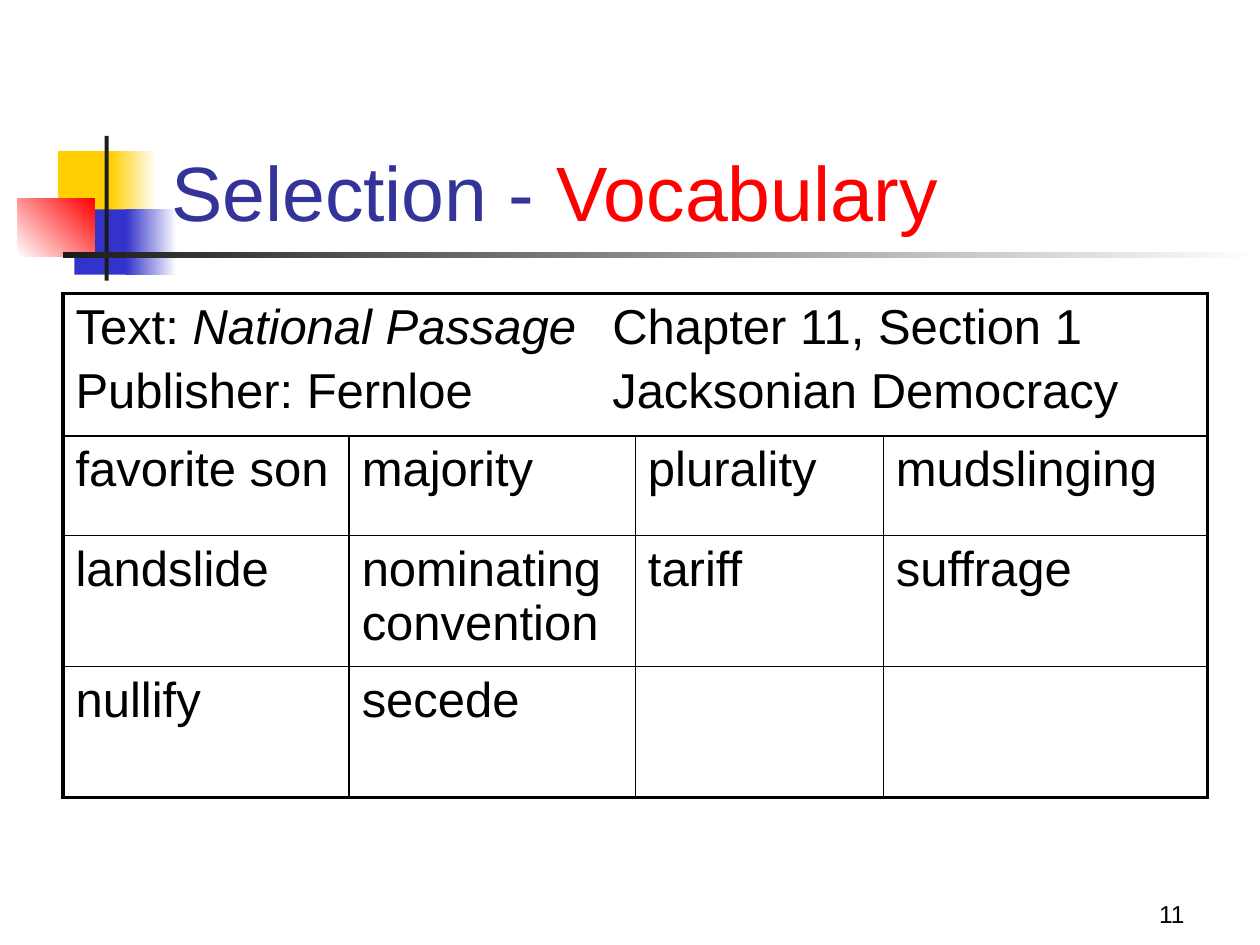
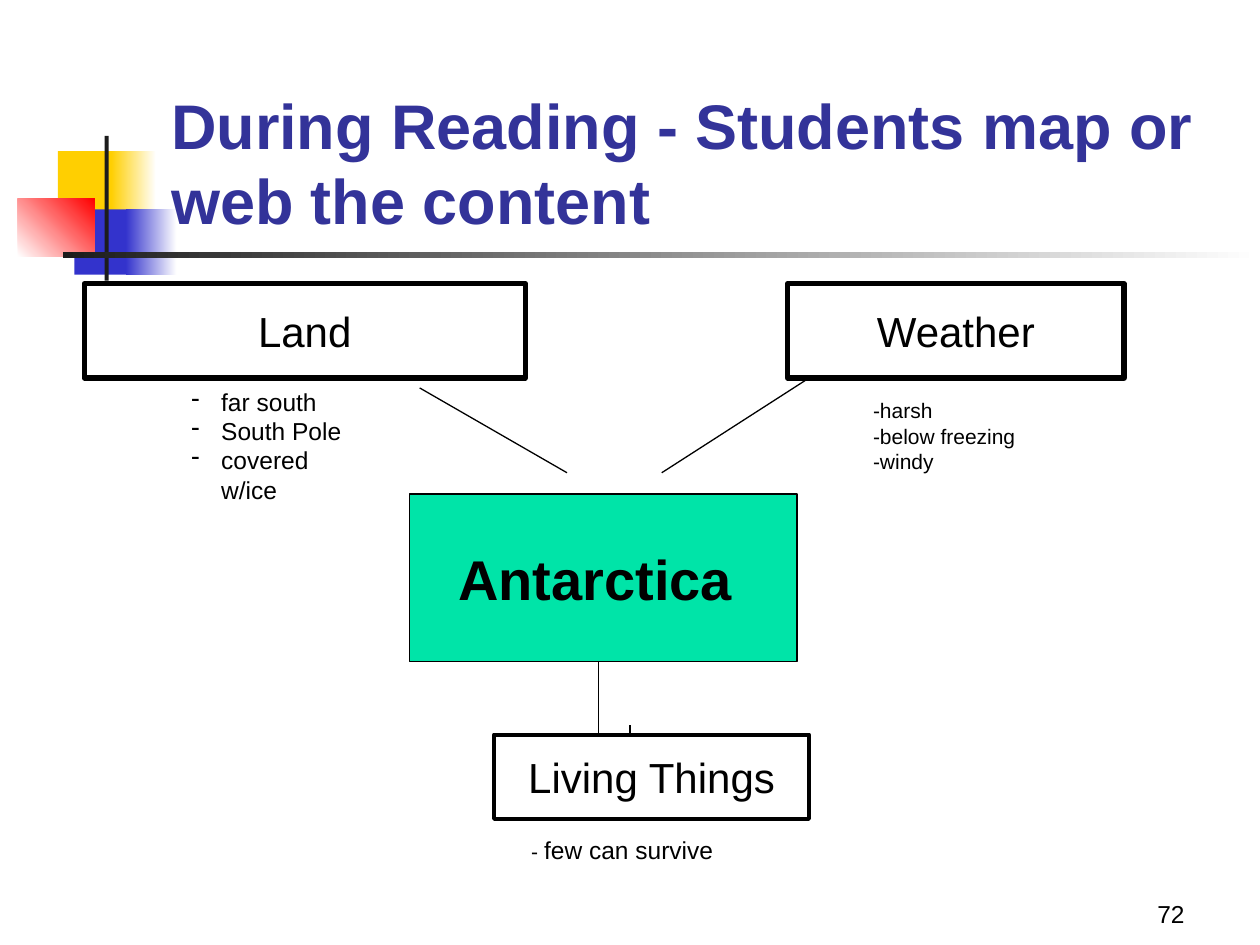
"""Build two reading-lesson slides: a vocabulary table and a concept web."""
from lxml import etree
from pptx import Presentation
from pptx import util as u
from pptx.dml.color import RGBColor
from pptx.enum import shapes, text
from pptx.oxml import ns

YELLOW = RGBColor(0xFF, 0xCF, 0x01)
BLUE = RGBColor(0x33, 0x33, 0xCC)
RED = RGBColor(0xFF, 0x00, 0x00)
CHARCOAL = RGBColor(0x1C, 0x1C, 0x1C)
INDIGO = RGBColor(0x33, 0x33, 0x99)
GREEN = RGBColor(0x00, 0xE4, 0xA8)
BLACK = RGBColor(0x00, 0x00, 0x00)
WHITE = RGBColor(0xFF, 0xFF, 0xFF)

FONT = "Arial"
BLANK_LAYOUT = 6
THIN, THICK = u.Pt(1), u.Pt(2.25)
LEFT, CENTER, RIGHT = text.PP_ALIGN.LEFT, text.PP_ALIGN.CENTER, text.PP_ALIGN.RIGHT

MOTIF = [
    ((1.17, 3.05, 1.22, 1.32), [YELLOW], 0),
    ((2.24, 3.05, 0.91, 1.32), [YELLOW, WHITE], 0),
    ((1.5, 4.22, 1.17, 1.32), [BLUE], 0),
    ((2.54, 4.22, 1.02, 1.32), [BLUE, WHITE], 0),
    ((0.36, 4.01, 1.55, 1.17), [WHITE, RED], 45),
    ((2.11, 2.74, 0.08, 2.92), [CHARCOAL], 0),
    ((1.27, 5.08, 24.13, 0.13), [CHARCOAL, WHITE], 0),
]

COLUMN_WIDTHS = [5.77, 5.77, 5, 6.53]
ROW_HEIGHTS = [2.87, 2.01, 2.64, 2.64]
VOCABULARY = [
    ["favorite son", "majority", "plurality", "mudslinging"],
    ["landslide", "nominating convention", "tariff", "suffrage"],
    ["nullify", "secede", "", ""],
]

SPOKES = [
    ((11.43, 9.53), (8.46, 7.82)),
    ((13.34, 9.53), (16.31, 7.62)),
    ((12.7, 14.81), (12.7, 14.61)),
    ((12.07, 13.34), (12.07, 14.81)),
]


def cm(lengths):
    """Turn plain numbers into centimetre lengths."""
    return [u.Cm(length) for length in lengths]


def set_values(target, values):
    """Set each named value as an attribute of the target."""
    for name, value in values.items():
        setattr(target, name, value)


def write(frame, lines, size, color=BLACK, align=LEFT, **paragraph_values):
    """Write lines of (text, font values) runs into a text frame."""
    for index, runs in enumerate(lines):
        paragraph = frame.paragraphs[0] if index == 0 else frame.add_paragraph()
        set_values(paragraph, {"alignment": align, **paragraph_values})
        for words, values in runs:
            run = paragraph.add_run()
            run.text = words
            font_values = {"name": FONT, "size": u.Pt(size), **values}
            run.font.color.rgb = font_values.pop("color", color)
            set_values(run.font, font_values)


def plain(*lines):
    """Make each line a single run without special font values."""
    return [[(line, {})] for line in lines]


def add_text(slide, box, lines, size, anchor=text.MSO_ANCHOR.BOTTOM, **style):
    """Add a wrapping text box and return its text frame."""
    frame = slide.shapes.add_textbox(*cm(box)).text_frame
    set_values(frame, {"word_wrap": True, "vertical_anchor": anchor})
    write(frame, lines, size, **style)
    return frame


def add_rectangle(slide, box, colors):
    """Add a rectangle without outline, solid or fading between two colours."""
    shape = slide.shapes.add_shape(shapes.MSO_SHAPE.RECTANGLE, *cm(box))
    shape.shadow.inherit = False
    shape.line.fill.background()
    if len(colors) == 1:
        shape.fill.solid()
        shape.fill.fore_color.rgb = colors[0]
    else:
        shape.fill.gradient()
        for stop, color in zip(shape.fill.gradient_stops, colors):
            stop.color.rgb = color
    return shape


def add_box(slide, box, lines, size, line_width, fill=WHITE, line=BLACK, align=CENTER):
    """Add an outlined rectangle with unwrapped text."""
    shape = add_rectangle(slide, box, [fill])
    shape.line.color.rgb = line
    shape.line.width = u.Pt(line_width)
    set_values(shape.text_frame, {"word_wrap": False,
                                  "vertical_anchor": text.MSO_ANCHOR.MIDDLE})
    write(shape.text_frame, lines, size, align=align)


def add_line(slide, start, end):
    """Add a thin straight black line."""
    connector = slide.shapes.add_connector(
        shapes.MSO_CONNECTOR.STRAIGHT, *cm(start), *cm(end))
    connector.line.color.rgb = BLACK
    connector.line.width = u.Pt(0.75)
    etree.SubElement(connector._element.spPr, ns.qn("a:effectLst"))


def add_dash_bullets(frame):
    """Give every paragraph a hanging dash bullet."""
    indent = u.Cm(0.6)
    for paragraph in frame.paragraphs:
        properties = paragraph._p.get_or_add_pPr()
        properties.set("marL", str(indent))
        properties.set("indent", str(-indent))
        etree.SubElement(properties, ns.qn("a:buChar"), char="-")


def add_tab_stop(paragraph, position):
    """Add a left tab stop at a position in centimetres."""
    stops = etree.SubElement(paragraph._p.get_or_add_pPr(), ns.qn("a:tabLst"))
    etree.SubElement(stops, ns.qn("a:tab"), pos=str(u.Cm(position)), algn="l")


def set_borders(cell, widths):
    """Draw black left, right, top and bottom borders of the given widths."""
    properties = cell._tc.get_or_add_tcPr()
    for index, (side, width) in enumerate(zip("LRTB", widths)):
        border = etree.Element(ns.qn(f"a:ln{side}"), w=str(width))
        fill = etree.SubElement(border, ns.qn("a:solidFill"))
        etree.SubElement(fill, ns.qn("a:srgbClr"), val=str(BLACK))
        properties.insert(index, border)


def add_vocabulary_table(slide, heading):
    """Add the word table with a merged heading row and a thick frame."""
    rows, columns = len(ROW_HEIGHTS), len(COLUMN_WIDTHS)
    box = (1.27, 5.92, sum(COLUMN_WIDTHS), sum(ROW_HEIGHTS))
    table = slide.shapes.add_table(rows, columns, *cm(box)).table
    set_values(table, {"first_row": False, "horz_banding": False})
    for column, width in zip(table.columns, cm(COLUMN_WIDTHS)):
        column.width = width
    for row, height in zip(table.rows, cm(ROW_HEIGHTS)):
        row.height = height
    table.cell(0, 0).merge(table.cell(0, columns - 1))

    contents = [[heading]] + [[plain(word) if word else [] for word in words]
                              for words in VOCABULARY]
    for row, row_contents in enumerate(contents):
        for column, lines in enumerate(row_contents):
            cell = table.cell(row, column)
            cell.fill.background()
            write(cell.text_frame, lines, 28, space_before=u.Pt(5.6))
            edges = (column == 0, column == len(row_contents) - 1,
                     row == 0, row == rows - 1)
            set_borders(cell, [THICK if edge else THIN for edge in edges])
    for paragraph in table.cell(0, 0).text_frame.paragraphs:
        add_tab_stop(paragraph, 10.82)


def add_slide(presentation, title, title_size, number):
    """Add a slide with the shared motif, title and page number."""
    slide = presentation.slides.add_slide(presentation.slide_layouts[BLANK_LAYOUT])
    for box, colors, angle in MOTIF:
        shape = add_rectangle(slide, box, colors)
        if len(colors) > 1:
            shape.fill.gradient_angle = angle
    add_text(slide, (18.85, 17.58, 5.28, 1.27), plain(number), 14, align=RIGHT)
    add_text(slide, (3.2, 1.73, 21.64, 3.18), [title], title_size, color=INDIGO)
    return slide


def build_vocabulary(presentation):
    """Build the vocabulary slide."""
    title = [("Selection - ", {}), ("Vocabulary", {"color": RED})]
    slide = add_slide(presentation, title, 44, "11")
    heading = [
        [("Text: ", {}), ("National Passage", {"italic": True}),
         ("\tChapter 11, Section 1", {})],
        [("Publisher: Fernloe\tJacksonian Democracy", {})],
    ]
    add_vocabulary_table(slide, heading)


def build_web(presentation):
    """Build the concept web slide."""
    bold = {"bold": True}
    title = [("During Reading - Students map or web the content", bold)]
    slide = add_slide(presentation, title, 36, "72")
    add_box(slide, (8.25, 9.96, 7.82, 3.38), [[("Antarctica ", bold)]], 32, 0.75, GREEN)
    add_box(slide, (15.88, 5.72, 6.78, 1.9), plain("Weather"), 24, 3)
    add_box(slide, (1.7, 5.72, 8.89, 1.9), plain("Land"), 24, 3)
    land_facts = add_text(slide, (3.61, 7.67, 3.68, 2.03),
                          plain("far south", "South Pole", "covered w/ice"), 14,
                          anchor=text.MSO_ANCHOR.TOP)
    add_dash_bullets(land_facts)
    add_box(slide, (17.35, 8.05, 5.08, 1.47),
            plain("-harsh", "-below freezing", "-windy"), 12, 0.75, line=WHITE, align=LEFT)
    add_box(slide, (9.96, 14.81, 6.35, 1.7), plain("Living Things"), 24, 2.25)
    survival = [("- ", {}), ("few can survive", {"size": u.Pt(14)})]
    add_box(slide, (10.46, 16.71, 4.45, 0.84), [survival], 12, 0.75, line=WHITE, align=LEFT)
    for start, end in SPOKES:
        add_line(slide, start, end)


def main():
    """Build and save the presentation."""
    presentation = Presentation()
    set_values(presentation, {"slide_width": u.Cm(25.4), "slide_height": u.Cm(19.05)})
    build_vocabulary(presentation)
    build_web(presentation)
    presentation.save("out.pptx")


if __name__ == "__main__":
    main()
